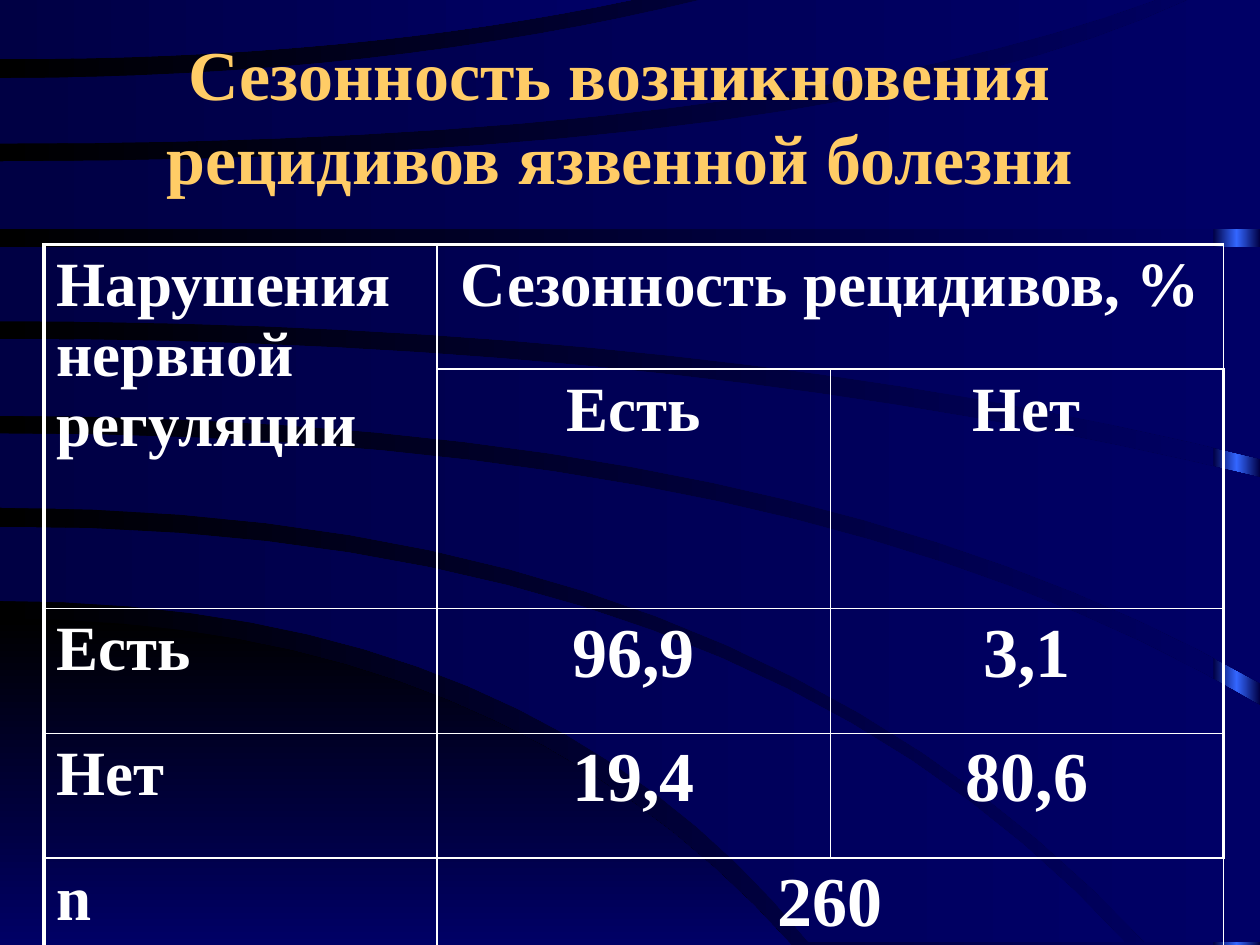
from copy import deepcopy

from lxml import etree
from pptx import Presentation
from pptx.dml.color import RGBColor
from pptx.enum.shapes import MSO_SHAPE
from pptx.enum.text import MSO_ANCHOR, PP_ALIGN
from pptx.oxml.ns import qn
from pptx.util import Inches, Pt

RECT = MSO_SHAPE.RECTANGLE
CENTER, LEFT = PP_ALIGN.CENTER, PP_ALIGN.LEFT
MIDDLE = MSO_ANCHOR.MIDDLE
FONT = "Times New Roman"
BLACK, NAVY, BLUE = "000000", "000044", "000066"
WHITE, GOLD, BRIGHT = "FFFFFF", "FFCC66", "3366FF"
THIN, THICK = 1, 2.25
STEPS = 16

HILL = ((4.91, 3.97, 6.28, 7.5), (7.5, 3, 6.28, 7.5), [])
BANDS = [
    ((4.18, 5.9, 8.93, 7.48), (4.77, 4.23, 6.42, 7.48), []),
    ((3.44, 6.4, 10, 5.6), (4.03, 5.88, 9.09, 7.48), [(10, 7.48)]),
    ((2.69, 5.5, 10, 3.79), (3.3, 6.3, 10, 5.42), []),
    ((1.96, 5, 10, 1.96), (2.55, 5.64, 10, 3.64), []),
    ((1.28, 6.68, 9.43, 0), (1.82, 5, 10, 1.82), [(10, 0)]),
    ((0.62, 3.02, 5.56, 0), (1.14, 6.07, 9.17, 0), []),
    ((0, 2.5, 5.01, 0), (0.47, 2.8, 5.01, 0), []),
]
ROWS = [
    ["Нарушения нервной регуляции", "Сезонность рецидивов, %", ""],
    ["", "Есть", "Нет"],
    ["Есть", "96,9", "3,1"],
    ["Нет", "19,4", "80,6"],
    ["n", "260", ""],
]
MERGES = [(0, 0, 1, 0), (0, 1, 0, 2), (4, 1, 4, 2)]


def rgb(code):
    return RGBColor.from_string(code)


def blend(fill, codes, angle=0):
    fill.gradient()
    fill.gradient_angle = angle
    first = fill.gradient_stops[0]._gs
    for _ in codes[2:]:
        first.addnext(deepcopy(first))
    for i, (stop, code) in enumerate(zip(fill.gradient_stops, codes)):
        stop.color.rgb = rgb(code)
        stop.position = i / (len(codes) - 1)


def finish(shape, codes, angle=0):
    shape.shadow.inherit = False
    shape.line.fill.background()
    blend(shape.fill, codes, angle)


def curve(start, bend, right, end):
    points = []
    for i in range(STEPS + 1):
        t = i / STEPS
        x = 2 * t * (1 - t) * bend + t * t * right
        points.append((x, start + t * t * (end - start)))
    return points


def add_band(slide, band, codes, angle=0):
    upper, lower, corner = band
    points = curve(*upper) + corner + curve(*lower)[::-1]
    spots = [(Inches(x), Inches(y)) for x, y in points]
    pen = slide.shapes.build_freeform(*spots[0])
    pen.add_line_segments(spots[1:])
    finish(pen.convert_to_shape(), codes, angle)


def write(frame, text, size, color, align):
    para = frame.paragraphs[0]
    para.text = text
    para.alignment = align
    font = para.font
    font.name, font.size, font.bold = FONT, Pt(size), True
    font.color.rgb = rgb(color)
    return para


def add_title(slide, text):
    box = slide.shapes.add_textbox(Inches(0.67), Inches(0.28), Inches(8.5), Inches(1.25))
    box.text_frame.word_wrap = True
    box.text_frame.vertical_anchor = MIDDLE
    write(box.text_frame, text, 40, GOLD, CENTER)


def set_edge(cell, side, width):
    props = cell._tc.get_or_add_tcPr()
    line = etree.SubElement(props, qn(f"a:ln{side}"), w=str(Pt(width)))
    fill = etree.SubElement(line, qn("a:solidFill"))
    etree.SubElement(fill, qn("a:srgbClr"), val=WHITE)


def add_grid(slide):
    rows, cols = len(ROWS), len(ROWS[0])
    wide, high = Inches(3.12), Inches(0.99)
    frame = slide.shapes.add_table(
        rows, cols, Inches(0.35), Inches(1.94), wide * cols, high * rows)
    table = frame.table
    table.first_row = table.horz_banding = False
    for col in table.columns:
        col.width = wide
    for r, texts in enumerate(ROWS):
        table.rows[r].height = high
        for c, text in enumerate(texts):
            cell = table.cell(r, c)
            outer = {"L": c == 0, "R": c == cols - 1, "T": r == 0, "B": r == rows - 1}
            for side, rim in outer.items():
                set_edge(cell, side, THICK if rim else THIN)
            cell.fill.background()
            if text:
                size = 40 if c and r > 1 else 36
                align = CENTER if c else LEFT
                para = write(cell.text_frame, text, size, WHITE, align)
                para.space_before = Pt(size * 0.2)
    for top, left, low, right in MERGES:
        table.cell(top, left).merge(table.cell(low, right))


def main():
    deck = Presentation()
    deck.slide_width, deck.slide_height = Inches(10), Inches(7.5)
    slide = deck.slides.add_slide(deck.slide_layouts[6])
    blend(slide.background.fill, [BLACK, BLUE])
    strip = slide.shapes.add_shape(RECT, Inches(9.63), 0, Inches(0.37), Inches(7.5))
    finish(strip, [NAVY, BRIGHT, NAVY])
    add_band(slide, HILL, [BLACK, BLUE], 270)
    for band in BANDS:
        add_band(slide, band, [NAVY, BLUE])
    add_title(slide, "Сезонность возникновения рецидивов язвенной болезни")
    add_grid(slide)
    deck.save("out.pptx")


if __name__ == "__main__":
    main()
